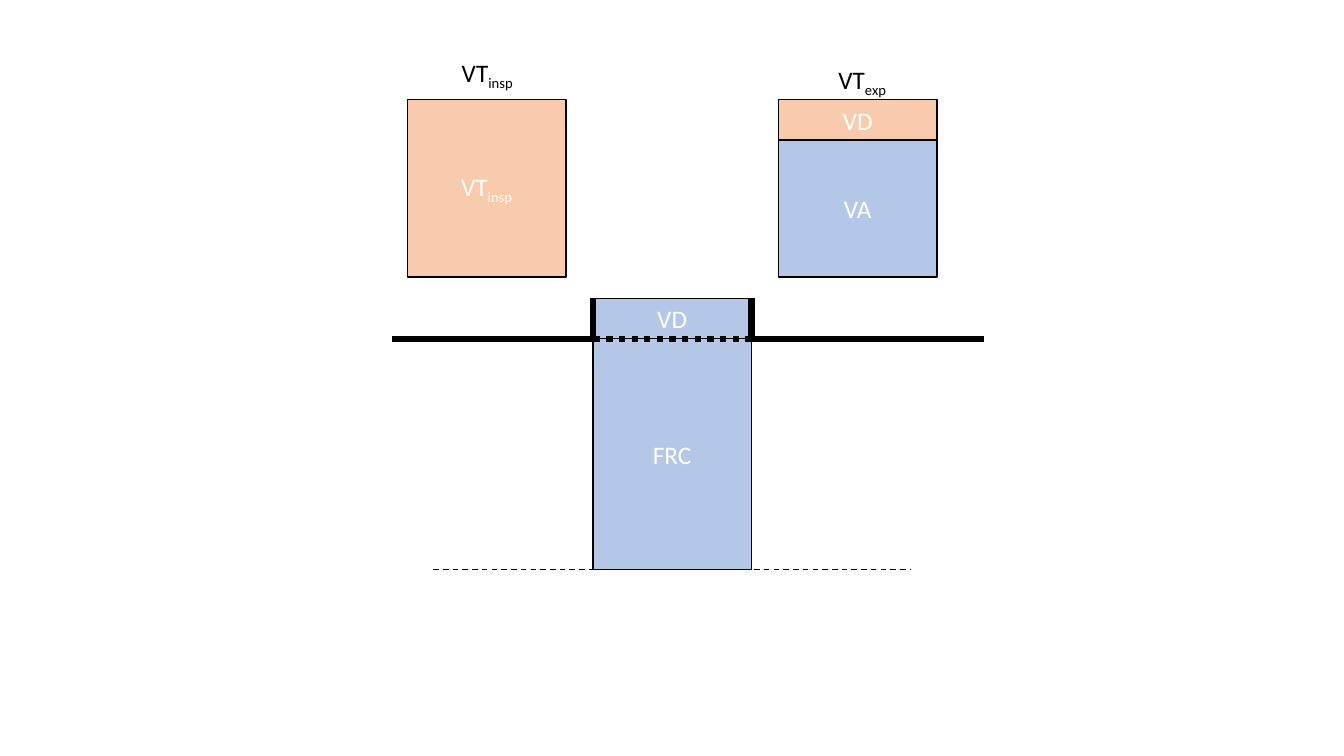
from dataclasses import dataclass
from typing import Optional

from pptx import Presentation
from pptx.dml.color import RGBColor
from pptx.enum.dml import MSO_LINE_DASH_STYLE as DASH
from pptx.enum.shapes import MSO_CONNECTOR, MSO_SHAPE
from pptx.enum.text import MSO_ANCHOR, MSO_AUTO_SIZE, PP_ALIGN
from pptx.oxml.ns import qn
from pptx.util import Inches, Pt

# Grid: three columns of boxes, rows of half a dead-space height
LEFT, TOP = 4.04, 0.99
COL, ROW = 1.84, 0.2
BOX_COLS = 0.855
DEAD_ROWS = 2
TIDAL_END = 8.8
FRC_TOP, FRC_END = 11.85, 23.3
FRC_RIGHT = 1 + BOX_COLS

BLUE, ORANGE = "B4C7E7", "F8CBAD"
BLACK, WHITE = "000000", "FFFFFF"


@dataclass
class Box:
    text: str
    col: float
    row: float
    end: float
    fill: str
    sub: str = ""


@dataclass
class Line:
    c1: float
    r1: float
    c2: float
    r2: float
    width: float = 4.5
    dash: Optional[DASH] = None


@dataclass
class Label:
    text: str
    sub: str
    col: float
    row: float
    cols: float


LUNG = [
    Box("FRC", 1, FRC_TOP, FRC_END, BLUE),
    Box("VD", 1, FRC_TOP - DEAD_ROWS, FRC_TOP, BLUE),
]
LINES = [
    Line(1, FRC_TOP - DEAD_ROWS, 1, FRC_TOP),
    Line(3.11, FRC_TOP, FRC_RIGHT, FRC_TOP),
    Line(1, FRC_TOP, -0.08, FRC_TOP),
    Line(FRC_RIGHT, FRC_TOP, 1, FRC_TOP, dash=DASH.ROUND_DOT),
    Line(FRC_RIGHT, FRC_TOP - DEAD_ROWS, FRC_RIGHT, FRC_TOP),
    Line(0.14, FRC_END, 2.71, FRC_END, width=1, dash=DASH.DASH),
]
EXPIRED = [
    Box("VA", 2, DEAD_ROWS, TIDAL_END, BLUE),
    Box("VD", 2, 0, DEAD_ROWS, ORANGE),
]
INSPIRED = [Box("VT", 0, 0, TIDAL_END, ORANGE, sub="insp")]
LABELS = [
    Label("VT", "exp", 2.27, -2, 0.375),
    Label("VT", "insp", 0.24, -2.35, 0.41),
]


def x(col: float) -> int:
    return Inches(LEFT + COL * col)


def y(row: float) -> int:
    return Inches(TOP + ROW * row)


def rgb(color: str) -> RGBColor:
    return RGBColor.from_string(color)


def write(tf, text: str, *, sub: str = "", color: str = BLACK,
          size: float = 18, align=PP_ALIGN.LEFT) -> None:
    p = tf.paragraphs[0]
    p.alignment = align
    for part, lowered in ((text, False), (sub, True)):
        if part:
            r = p.add_run()
            r.text = part
            r.font.name, r.font.size = "Calibri", Pt(size)
            r.font.color.rgb = rgb(color)
            if lowered:
                r.font._element.set("baseline", "-25000")


def draw_box(shapes, box: Box) -> None:
    sp = shapes.add_shape(MSO_SHAPE.RECTANGLE, x(box.col), y(box.row),
                          Inches(COL * BOX_COLS), Inches(ROW * (box.end - box.row)))
    sp.shadow.inherit = False
    sp.fill.solid()
    sp.fill.fore_color.rgb = rgb(box.fill)
    sp.line.color.rgb = rgb(BLACK)
    sp.line.width = Pt(1)
    sp.text_frame.vertical_anchor = MSO_ANCHOR.MIDDLE
    write(sp.text_frame, box.text, sub=box.sub, color=WHITE, align=PP_ALIGN.CENTER)


def draw_line(shapes, line: Line) -> None:
    cx = shapes.add_connector(MSO_CONNECTOR.STRAIGHT, x(line.c1), y(line.r1),
                              x(line.c2), y(line.r2))
    cx.line.color.rgb = rgb(BLACK)
    cx.line.width = Pt(line.width)
    if line.dash is not None:
        cx.line.dash_style = line.dash
    sp_pr = cx._element.spPr
    sp_pr.append(sp_pr.makeelement(qn("a:effectLst"), {}))


def draw_label(shapes, label: Label) -> None:
    sp = shapes.add_textbox(x(label.col), y(label.row),
                            Inches(COL * label.cols), Inches(0.4))
    tf = sp.text_frame
    tf.word_wrap = False
    tf.auto_size = MSO_AUTO_SIZE.SHAPE_TO_FIT_TEXT
    write(tf, label.text, sub=label.sub)


def main() -> None:
    prs = Presentation()
    prs.slide_width, prs.slide_height = Inches(13.33), Inches(7.5)
    s = prs.slides.add_slide(prs.slide_layouts[6])

    # Resting lung volume with its airway
    for box in LUNG:
        draw_box(s.shapes, box)
    for line in LINES:
        draw_line(s.shapes, line)

    # Expired volume, kept together as a group
    group = s.shapes.add_group_shape()
    for box in EXPIRED:
        draw_box(group.shapes, box)

    # Inspired volume and the headings
    for box in INSPIRED:
        draw_box(s.shapes, box)
    for label in LABELS:
        draw_label(s.shapes, label)

    prs.save("out.pptx")


if __name__ == "__main__":
    main()
